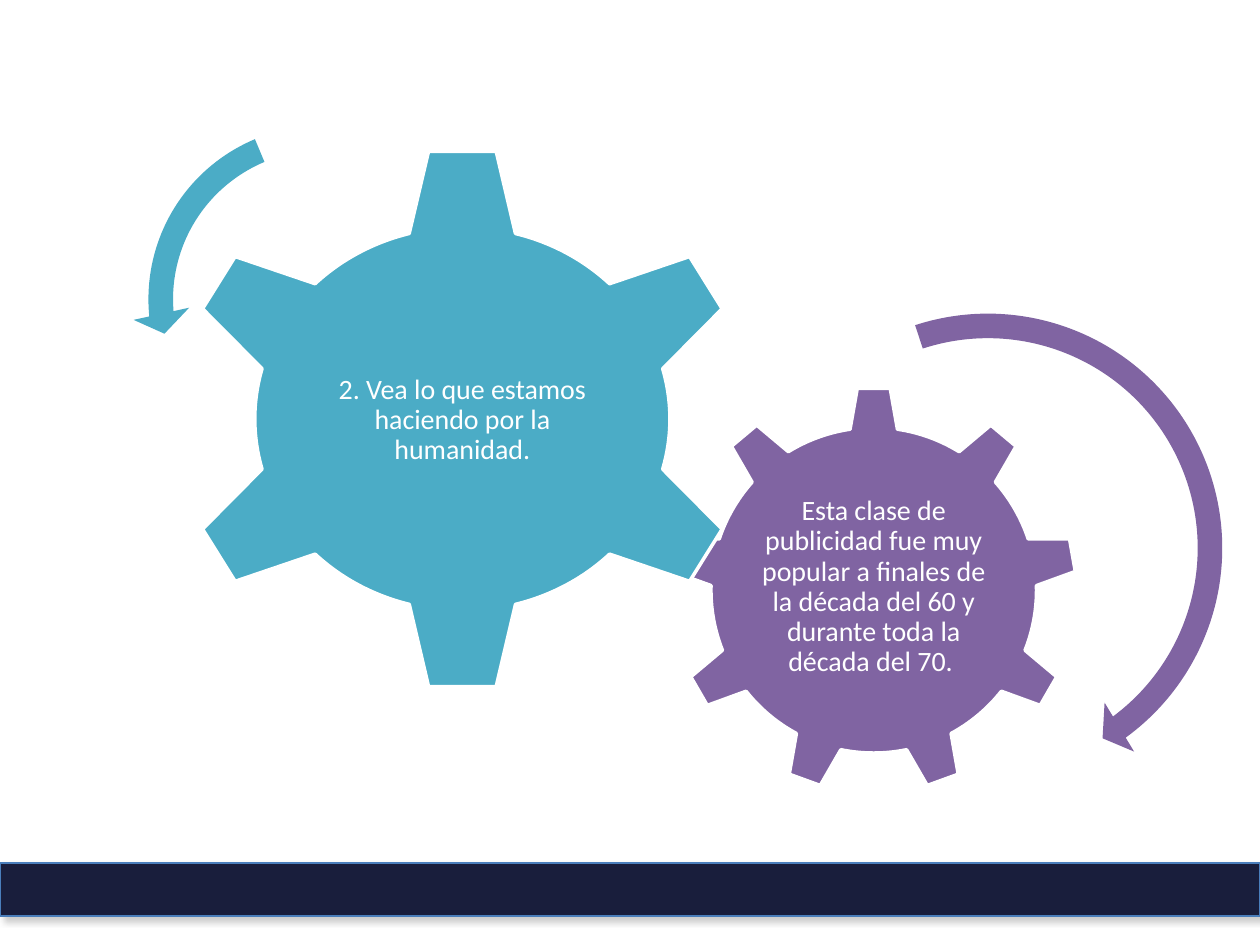
from lxml import etree
from pptx import Presentation
from pptx.dml.color import RGBColor
from pptx.enum.shapes import MSO_SHAPE
from pptx.enum.text import MSO_ANCHOR, PP_ALIGN
from pptx.oxml.ns import qn
from pptx.util import Inches, Pt

BLANK_LAYOUT = 6
RECTANGLE = MSO_SHAPE.RECTANGLE
MIDDLE = MSO_ANCHOR.MIDDLE
CENTER = PP_ALIGN.CENTER

COLORS = {
    "navy": "191E3C", "bar line": "4A7EBB", "shadow": "808080",
    "purple": "8064A2", "teal": "4BACC6", "white": "FFFFFF",
}

# Gears: preset, colour, box, text box, text
GEARS = [
    (MSO_SHAPE.GEAR_9, "purple", (5.32, 3.07, 3.23, 3.23), (5.97, 3.83, 1.93, 1.66),
     "Esta clase de publicidad fue muy popular a finales de la década del 60 "
     "y durante toda la década del 70. "),
    (MSO_SHAPE.GEAR_6, "teal", (1.37, 1.15, 4.6, 4.35), (2.5, 2.26, 2.34, 2.15),
     "2. Vea lo que estamos haciendo por la humanidad."),
]

# Rotation arrows: preset, colour, box, adjustments
ARROWS = [
    (MSO_SHAPE.CIRCULAR_ARROW, "purple", (5.85, 2.36, 3.98, 3.98),
     (0.049, 3.126, 32.219, 151.168, 0.057)),
    (MSO_SHAPE.LEFT_CIRCULAR_ARROW, "teal", (1.05, 0.87, 3.01, 3.01),
     (0.065, 4.3, 104.891, 148.378, 0.075)),
]


def color(name):
    return RGBColor.from_string(COLORS[name])


def add_filled_shape(slide, preset, box, fill, line=None, line_width=0):
    shape = slide.shapes.add_shape(preset, *map(Inches, box))
    shape.shadow.inherit = False
    shape.fill.solid()
    shape.fill.fore_color.rgb = color(fill)
    if line:
        shape.line.color.rgb = color(line)
        shape.line.width = Pt(line_width)
    else:
        shape.line.fill.background()
    return shape


def add_drop_shadow(shape, name, opacity, blur, distance, angle):
    effects = shape._element.spPr.find(qn("a:effectLst"))
    shadow = etree.SubElement(
        effects, qn("a:outerShdw"), blurRad=str(Pt(blur)), dist=str(Pt(distance)),
        dir=str(angle * 60000), algn="tl", rotWithShape="0")
    tint = etree.SubElement(shadow, qn("a:srgbClr"), val=COLORS[name])
    etree.SubElement(tint, qn("a:alpha"), val=str(opacity * 1000))


def add_label(slide, box, text):
    text_frame = slide.shapes.add_textbox(*map(Inches, box)).text_frame
    text_frame.word_wrap = True
    text_frame.vertical_anchor = MIDDLE
    text_frame.margin_left = text_frame.margin_right = Inches(0.02)
    text_frame.margin_top = text_frame.margin_bottom = Inches(0.02)
    text_frame.text = text
    paragraph = text_frame.paragraphs[0]
    paragraph.alignment = CENTER
    paragraph.line_spacing = 0.9
    font = paragraph.runs[0].font
    font.name = "Calibri"
    font.size = Pt(16)
    font.color.rgb = color("white")


def main():
    presentation = Presentation()
    presentation.slide_width = Inches(10)
    presentation.slide_height = Inches(7.5)
    slide = presentation.slides.add_slide(presentation.slide_layouts[BLANK_LAYOUT])

    # Footer bar
    bar = add_filled_shape(slide, RECTANGLE, (0, 6.85, 10, 0.42), "navy", "bar line", 0.75)
    add_drop_shadow(bar, "shadow", opacity=40, blur=4, distance=3, angle=45)

    # Gears with their text
    for preset, fill, box, text_box, text in GEARS:
        add_filled_shape(slide, preset, box, fill, "white", 2)
        add_label(slide, text_box, text)

    # Rotation arrows
    for preset, fill, box, adjustments in ARROWS:
        arrow = add_filled_shape(slide, preset, box, fill)
        for index, value in enumerate(adjustments):
            arrow.adjustments[index] = value

    presentation.save("out.pptx")


if __name__ == "__main__":
    main()
